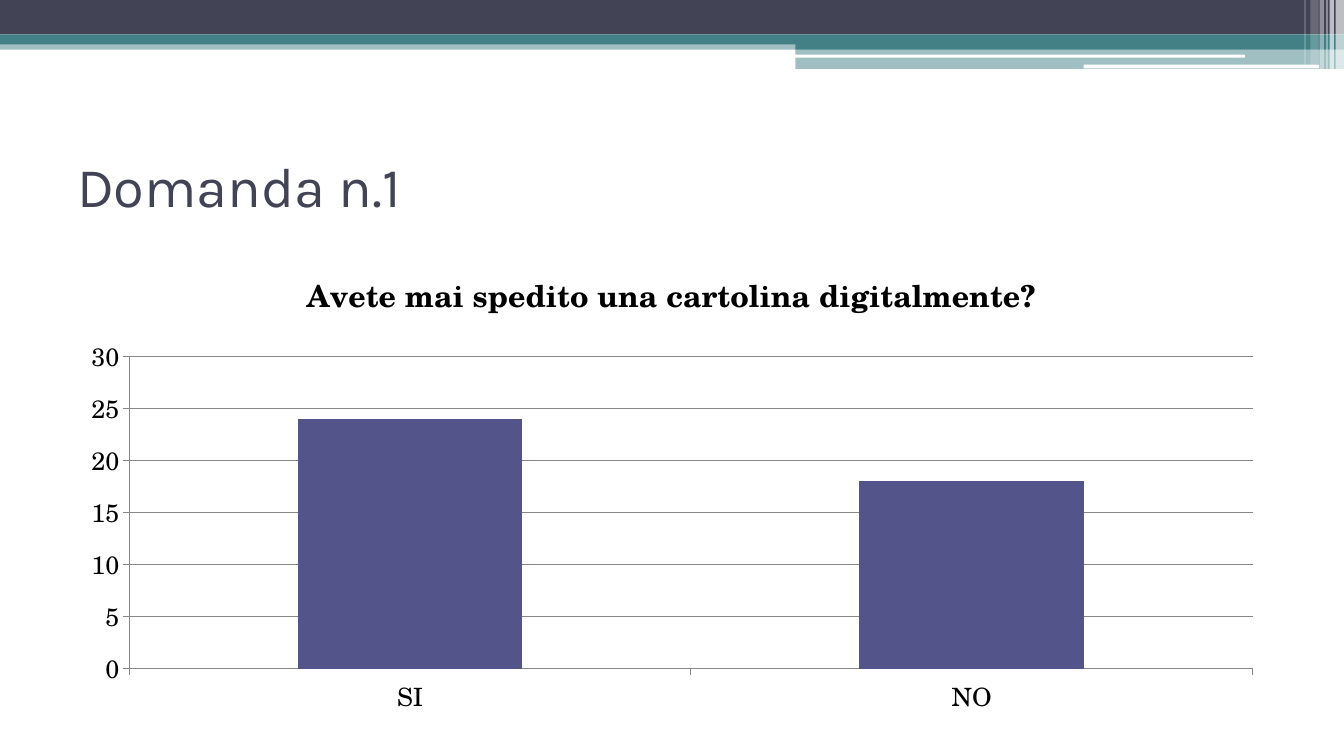
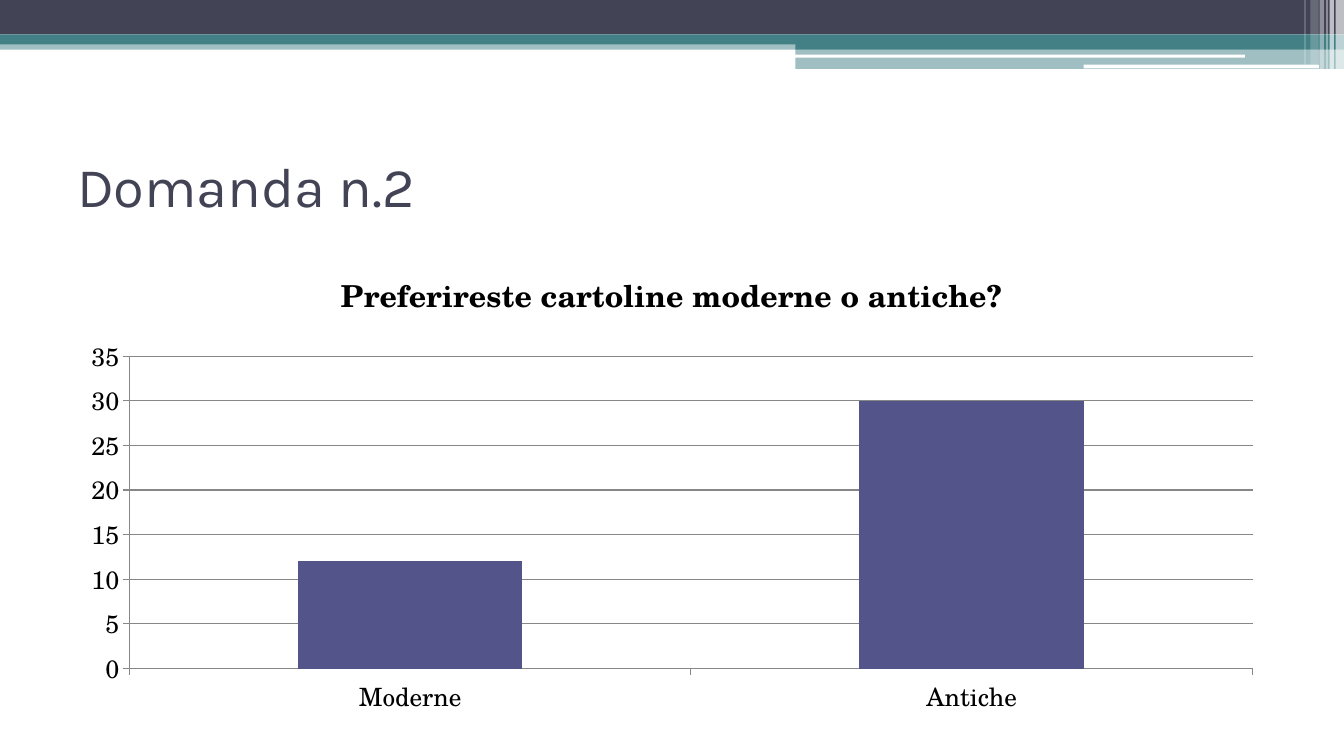
from lxml import etree
from pptx import Presentation
from pptx import util as u
from pptx.chart.data import CategoryChartData
from pptx.dml.color import RGBColor
from pptx.enum import chart as charts, shapes, text
from pptx.oxml import ns

COLUMNS, ROWS = 160, 90
CELL = u.Inches(1 / 12)

DARK, TEAL, WHITE, BLACK = "424456", "438086", "FFFFFF", "000000"
BAR, AXIS = "53548A", "878787"
TITLE_FONT, CHART_FONT = "Karla", "TeX Gyre Schola"

MARGIN = 8
CONTENT_WIDTH = COLUMNS - 2 * MARGIN
SPLIT = 94.7  # column where the right-hand bands begin

# column, row, width, height, colour, opacity in percent
BANDS = [
    (0, 4.8, COLUMNS, 1.1, TEAL, 50),
    (0, 0, COLUMNS, 4.1, DARK, 100),
    (0, 4.1, COLUMNS, 1.2, TEAL, 100),
    (SPLIT, 4.7, COLUMNS - SPLIT, 1.2, TEAL, 100),
    (SPLIT, 5.8, COLUMNS - SPLIT, 2.4, TEAL, 50),
]
WHITE_LINES = [(94.6, 6.5, 53.6, 0.36), (129, 7.7, 28, 0.45)]
# column, width, height, opacity in percent
STRIPES = [
    (159, 1, 8.2, 65),
    (158.3, 0.5, 8.2, 65),
    (157.9, 0.15, 8.2, 60),
    (157.1, 0.5, 8.2, 40),
    (156, 1, 7.7, 20),
    (155.3, 0.15, 7.7, 30),
]

QUESTIONS = [
    ("Domanda n.1", "Avete mai spedito una cartolina digitalmente?",
     {"SI": 24, "NO": 18}, 30),
    ("Domanda n.2", "Preferireste cartoline moderne o antiche?",
     {"Moderne": 12, "Antiche": 30}, 35),
]


def cells(*counts):
    """Turn counts of grid cells into lengths."""
    return [u.Emu(round(count * CELL)) for count in counts]


def color(hex_string):
    return RGBColor.from_string(hex_string)


def style_font(font, name, size, hex_string, bold=False):
    font.name = name
    font.size = u.Pt(size)
    font.bold = bold
    font.color.rgb = color(hex_string)


class Deck:
    def __init__(self):
        self.presentation = Presentation()
        self.presentation.slide_width, self.presentation.slide_height = cells(COLUMNS, ROWS)
        self.slide = None

    def add_slide(self):
        self.slide = self.presentation.slides.add_slide(self.presentation.slide_layouts[6])
        for *place, fill, opacity in BANDS:
            self.block(place, fill, opacity)
        for place in WHITE_LINES:
            self.block(place, WHITE, kind=shapes.MSO_SHAPE.ROUNDED_RECTANGLE)
        for column, width, height, opacity in STRIPES:
            self.block((column, 0, width, height), WHITE, opacity)

    def block(self, place, fill, opacity=100, kind=shapes.MSO_SHAPE.RECTANGLE):
        shape = self.slide.shapes.add_shape(kind, *cells(*place))
        shape.shadow.inherit = False
        shape.line.fill.background()
        shape.fill.solid()
        shape.fill.fore_color.rgb = color(fill)
        if opacity < 100:
            value = shape.fill._xPr.find(".//" + ns.qn("a:srgbClr"))
            etree.SubElement(value, ns.qn("a:alpha"), val=str(opacity * 1000))

    def title(self, wording):
        box = self.slide.shapes.add_textbox(*cells(MARGIN, 15, CONTENT_WIDTH, 14))
        frame = box.text_frame
        frame.word_wrap = True
        frame.vertical_anchor = text.MSO_ANCHOR.MIDDLE
        frame.text = wording
        style_font(frame.paragraphs[0].runs[0].font, TITLE_FONT, 40, DARK)

    def column_chart(self, heading, answers, maximum):
        data = CategoryChartData()
        data.categories = list(answers)
        data.add_series("Series 1", list(answers.values()))
        frame = self.slide.shapes.add_chart(
            charts.XL_CHART_TYPE.COLUMN_CLUSTERED,
            *cells(MARGIN, 29.5, CONTENT_WIDTH, 56.8), data)
        chart = frame.chart
        chart.has_legend = False
        style_font(chart.font, CHART_FONT, 18, BLACK)

        chart.has_title = True
        chart.chart_title.include_in_layout = False
        heading_frame = chart.chart_title.text_frame
        heading_frame.text = heading
        style_font(heading_frame.paragraphs[0].runs[0].font, CHART_FONT, 21.6, BLACK, bold=True)

        plot = chart.plots[0]
        plot.gap_width = 150
        plot.vary_by_categories = False
        bars = plot.series[0].format.fill
        bars.solid()
        bars.fore_color.rgb = color(BAR)

        values = chart.value_axis
        values.minimum_scale, values.maximum_scale, values.major_unit = 0, maximum, 5
        values.has_major_gridlines = True
        for axis in (chart.category_axis, values):
            axis.major_tick_mark = charts.XL_TICK_MARK.OUTSIDE
            axis.minor_tick_mark = charts.XL_TICK_MARK.NONE
        for part in (chart.category_axis, values, values.major_gridlines):
            part.format.line.color.rgb = color(AXIS)
            part.format.line.width = u.Pt(0.75)


def main():
    deck = Deck()
    for title, heading, answers, maximum in QUESTIONS:
        deck.add_slide()
        deck.title(title)
        deck.column_chart(heading, answers, maximum)
    deck.presentation.save("out.pptx")


if __name__ == "__main__":
    main()
